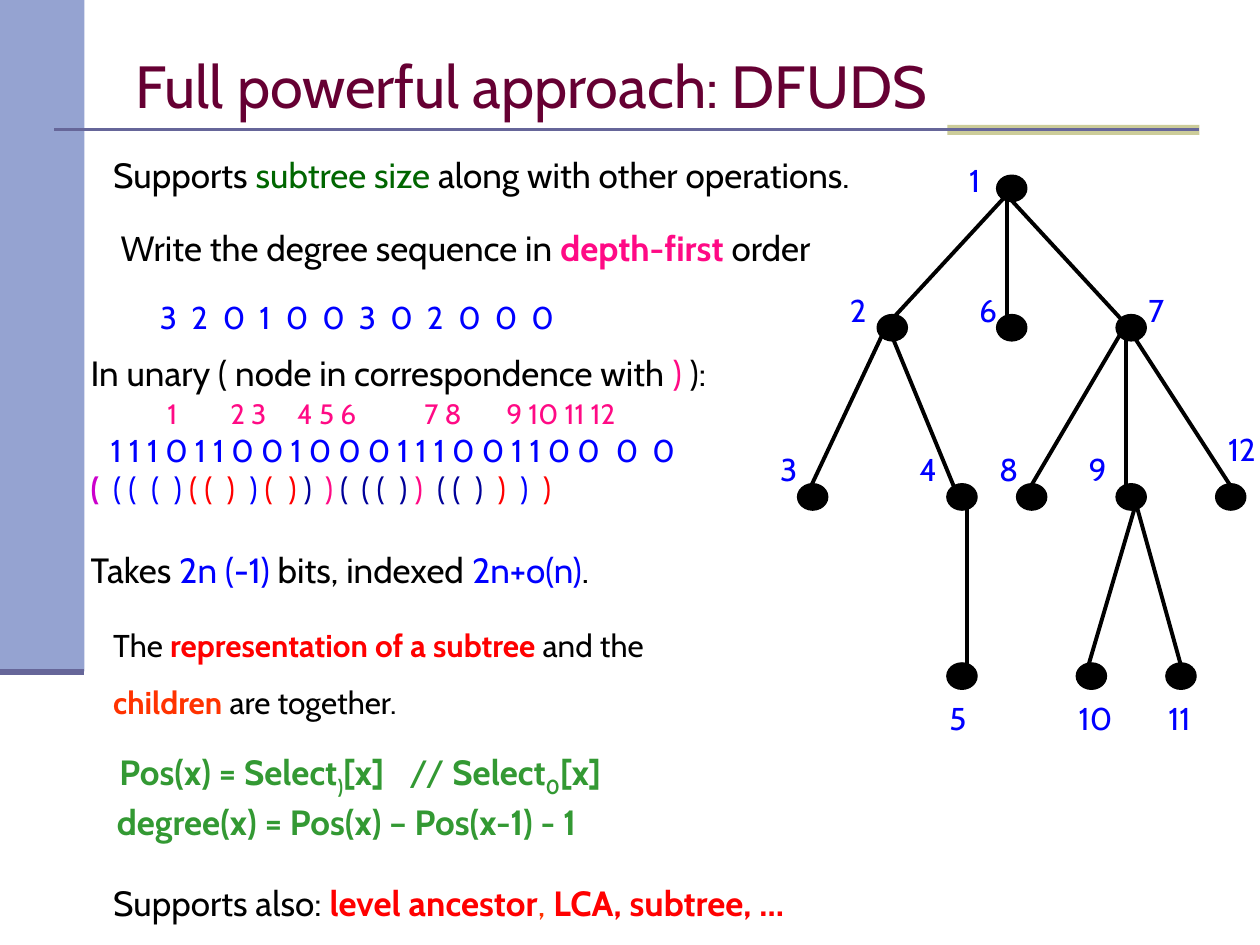
from lxml.etree import SubElement
from pptx import Presentation
from pptx.dml.color import RGBColor
from pptx.enum.shapes import MSO_CONNECTOR, MSO_SHAPE
from pptx.enum.text import MSO_ANCHOR
from pptx.oxml.ns import qn
from pptx.util import Inches, Pt

deck = Presentation()
deck.slide_width, deck.slide_height = Inches(10), Inches(7.5)
slide = deck.slides.add_slide(deck.slide_layouts[6])
UNIT = deck.slide_width / 100  # 100 columns by 75 rows

BLACK, BLUE, NAVY = "000000", "0000FF", "000099"
RED, ORANGE, PINK = "FF0000", "FF3300", "FF0A85"
GREEN, DARK_GREEN, PURPLE = "339933", "006600", "CC00CC"
STEEL, BOLD = "666699", {"bold": True}


def paint(color_format, hex_code):
    color_format.rgb = RGBColor.from_string(hex_code)


def write(place, paragraphs, size, wrap=True):
    """Place text; a paragraph is (runs, format values, tab stops in units)."""
    box = slide.shapes.add_textbox(*[round(n * UNIT) for n in place])
    frame = box.text_frame
    frame.word_wrap = wrap
    for number, (runs, layout, stops) in enumerate(paragraphs):
        line = frame.paragraphs[0] if number == 0 else frame.add_paragraph()
        for key, value in layout.items():
            setattr(line, key, value)
        if stops:
            tab_list = SubElement(line._p.get_or_add_pPr(), qn("a:tabLst"))
            for stop in stops:
                SubElement(tab_list, qn("a:tab"), pos=str(round(stop * UNIT)), algn="l")
        for words, hex_code, *extra in runs:
            run = line.add_run()
            run.text = words
            look = {"name": "Cabin", "size": Pt(size), **(extra[0] if extra else {})}
            baseline = look.pop("baseline", None)
            for key, value in look.items():
                setattr(run.font, key, value)
            if baseline:
                run.font._element.set("baseline", baseline)
            paint(run.font.color, hex_code)
    return frame


# Tree: node -> column, row, label shift, all in tree cells from the root
CELL, ROOT_X, ROOT_Y = 0.79, 79.1, 13.9
LEVELS = [0, 14, 31, 49]
nodes = {
    1: (0, 0, -4, -2),
    2: (-12, 1, -4, -3),
    3: (-20, 2, -3, -4),
    4: (-5, 2, -4, -4),
    5: (-5, 3, -1, 3),
    6: (0, 1, -3, -3),
    7: (12, 1, 2, -3),
    8: (2, 2, -3, -4),
    9: (12, 2, -4, -4),
    10: (8, 3, -1, 3),
    11: (17, 3, -1, 3),
    12: (22, 2, 0, -6),
}
# Edge: parent, child, start shift, end shift
edges = [
    (1, 6, (1, 2), (1, 1)),
    (1, 2, (1, 2), (1, 1)),
    (1, 7, (1, 2), (1, 1)),
    (2, 3, (1, 1), (1, 1)),
    (2, 4, (1, 1), (1, 1)),
    (7, 9, (1, 1), (1, 1)),
    (7, 8, (1, 1), (1, 1)),
    (7, 12, (1, 1), (2, 1)),
    (4, 5, (2, 1), (2, 1)),
    (9, 10, (2, 2), (1, 1)),
    (9, 11, (2, 2), (2, 2)),
]
spots = {n: (ROOT_X + CELL * col, ROOT_Y + CELL * LEVELS[level])
         for n, (col, level, *_) in nodes.items()}

# Side band, title accent and tree nodes
solids = [(MSO_SHAPE.RECTANGLE, (0, 0, 6.7, 53.3), "95A3D1"),
          (MSO_SHAPE.RECTANGLE, (75.2, 9.9, 20, 0.8), "CCCC99")]
solids += [(MSO_SHAPE.OVAL, (x, y, 2.4, 2.1), BLACK) for x, y in spots.values()]
for kind, place, hex_code in solids:
    solid = slide.shapes.add_shape(kind, *[round(n * UNIT) for n in place])
    solid.shadow.inherit = False
    solid.fill.solid()
    paint(solid.fill.fore_color, hex_code)
    if kind == MSO_SHAPE.OVAL:
        paint(solid.line.color, hex_code)
        solid.line.width = Pt(0.75)
    else:
        solid.line.fill.background()

# Rules and tree edges
strokes = [((4.3, 10.3, 95.2, 10.3), STEEL, 1.5), ((0, 53.3, 6.7, 53.3), STEEL, 3.5)]
for parent, child, start, end in edges:
    ends = [spot + CELL * shift
            for spot, shift in zip(spots[parent] + spots[child], start + end)]
    strokes.append((ends, BLACK, 2.25))
for ends, hex_code, width in strokes:
    stroke = slide.shapes.add_connector(
        MSO_CONNECTOR.STRAIGHT, *[round(n * UNIT) for n in ends])
    paint(stroke.line.color, hex_code)
    stroke.line.width = Pt(width)
    SubElement(stroke._element.spPr, qn("a:effectLst"))

# Node numbers
for n, (x, y) in spots.items():
    dx, dy = nodes[n][2:]
    place = (x + CELL * dx, y + CELL * dy, 3.4 if n < 10 else 4.8, 4)
    write(place, [([(str(n), BLUE)], {}, [])], 18, wrap=False)

# Title
title = write((9.8, 2.8, 85, 7.9),
              [([("Full powerful approach: DFUDS", "660033")], {}, [])], 34)
title.vertical_anchor = MSO_ANCHOR.MIDDLE

# Introduction and degree sequence
write((8, 11.7, 64.3, 4.4), [([
    ("Supports ", BLACK), ("subtree size", DARK_GREEN),
    (" along with other operations.", BLACK)], {}, [])], 20)
write((8.6, 17.5, 61.8, 4.4), [([
    ("Write the degree sequence in ", BLACK), ("depth-first", PINK, BOLD),
    (" order", BLACK)], {}, [])], 20)
degree_stops = [2.5, 5, 7.9, 10, 12.9, 15.8, 18.3, 21.2, 23.7, 26.6, 29.5]
write((11.7, 23.2, 40.7, 4),
      [([("\t".join("320100302000"), BLUE)], {}, degree_stops)], 18)

# Unary code, parentheses and space needed
small, large = {"size": Pt(16)}, {"size": Pt(20)}
parentheses = [
    ("(", PURPLE, BOLD), ("\t( (\t(\t) ", BLUE), ("( (\t)\t", RED), (") ", BLUE),
    ("(\t) ", RED), (")\t", NAVY), (") ", PINK), ("(\t( (\t) ", NAVY),
    (")\t", PINK), ("( (\t)\t", NAVY), (")", RED), ("\t)\t", BLUE), (")", RED)]
parenthesis_stops = [1.8, 4.8, 6.6, 10.8, 12.6, 15.7, 18.6, 21.5, 24.5,
                     27.5, 30.5, 32.3, 34.1, 35.9]
write((6.2, 27.4, 80.2, 20.2), [
    ([("In unary ( node in correspondence with ", BLACK, large),
      (") ", PINK, large), ("):", BLACK, large)], {}, []),
    ([("\t", PINK), ("1\t2 3\t4 5 6\t7 8\t9 10 11 12", PINK, small)], {},
     [6.1, 11.1, 16.4, 26.5, 33]),
    ([("\t1 1 1 0 1 1 0 0 1 0 0 0 1 1 1 0 0 1 1 0 0\t0\t0", BLUE)], {},
     [1.6, 41.7, 44.6]),
    (parentheses, {}, parenthesis_stops),
    ([("Takes ", BLACK, large), ("2n (-1)", BLUE, large),
      (" bits, indexed ", BLACK, large), ("2n+o(n)", BLUE, large),
      (".", BLACK, large)], {"space_before": Pt(24)}, []),
], 18)

# Subtree property, formulas and further operations
loose = {"line_spacing": 1.5}
subscript = {"bold": True, "baseline": "-25000"}
write((8, 47.7, 50.9, 10.1), [
    ([("The ", BLACK), ("representation of a subtree ", RED, BOLD),
      ("and the", BLACK)], loose, []),
    ([("children ", ORANGE, BOLD), ("are together.", BLACK)], loose, []),
], 18)
write((8.5, 57.2, 48.4, 5.4), [([
    ("Pos(x) = Select", GREEN, BOLD), (")", GREEN, subscript),
    ("[x]\t", GREEN, BOLD), ("// ", GREEN), ("Select", GREEN, BOLD),
    ("0", GREEN, subscript), ("[x]", GREEN, BOLD)], loose, [23])], 20)
write((8.3, 61.4, 49.6, 6.1), [
    ([("degree(x) = Pos(x) – Pos(x-1) - 1", GREEN, BOLD)], loose, [])], 20)
write((8, 67.8, 64.3, 6.1), [([
    ("Supports also: ", BLACK), ("level ancestor", RED, BOLD), (", ", ORANGE),
    ("LCA, subtree, …", RED, BOLD)], loose, [])], 20)

deck.save("out.pptx")
